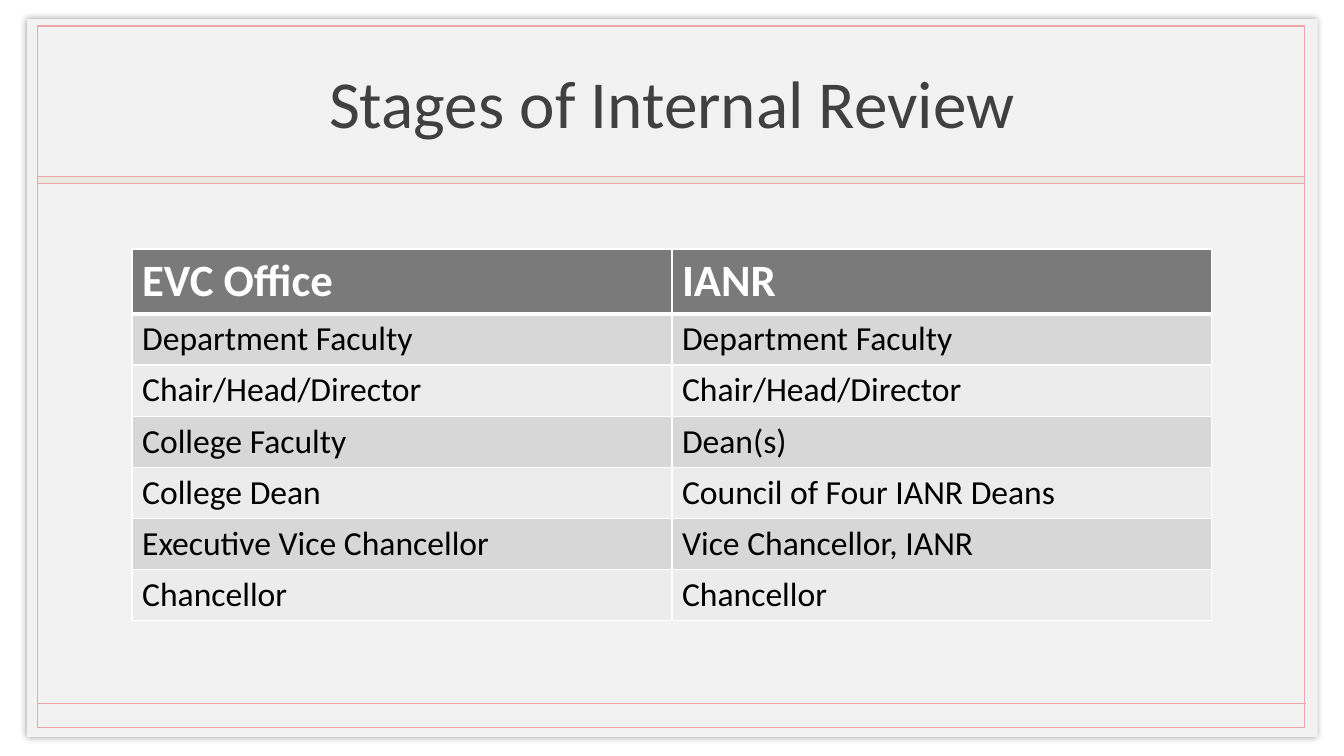
from lxml import etree
from pptx import Presentation
from pptx.dml.color import RGBColor
from pptx.enum.shapes import MSO_CONNECTOR, MSO_SHAPE
from pptx.enum.text import MSO_ANCHOR, PP_ALIGN
from pptx.oxml.ns import qn
from pptx.util import Inches, Pt

RECTANGLE = MSO_SHAPE.RECTANGLE
STRAIGHT = MSO_CONNECTOR.STRAIGHT
MIDDLE = MSO_ANCHOR.MIDDLE
LEFT, CENTER = PP_ALIGN.LEFT, PP_ALIGN.CENTER

WHITE = RGBColor(0xFF, 0xFF, 0xFF)
BLACK = RGBColor(0x00, 0x00, 0x00)
PANEL = RGBColor(0xF2, 0xF2, 0xF2)
ROSE = RGBColor(0xEE, 0xA7, 0xAA)
BAND = RGBColor(0xE9, 0xE9, 0xE0)
TITLE_GREY = RGBColor(0x40, 0x40, 0x40)
HEADER_GREY = RGBColor(0x7A, 0x7A, 0x7A)
ROW_FILLS = (RGBColor(0xD7, 0xD7, 0xD7), RGBColor(0xEC, 0xEC, 0xEC))

STAGES = [
    ("EVC Office", "IANR"),
    ("Department Faculty", "Department Faculty"),
    ("Chair/Head/Director", "Chair/Head/Director"),
    ("College Faculty", "Dean(s)"),
    ("College Dean", "Council of Four IANR Deans"),
    ("Executive Vice Chancellor", "Vice Chancellor, IANR"),
    ("Chancellor", "Chancellor"),
]


def write(frame, text, *, size, color, font="Calibri", bold=False, align=LEFT):
    paragraph = frame.paragraphs[0]
    paragraph.alignment = align
    run = paragraph.add_run()
    run.text = text
    run.font.name = font
    run.font.size = Pt(size)
    run.font.bold = bold
    run.font.color.rgb = color


def add_xml(parent, tag, **attributes):
    return etree.SubElement(parent, qn(tag), attributes)


def add_border(cell, side, width):
    border = add_xml(cell._tc.get_or_add_tcPr(), f"a:ln{side}", w=str(Pt(width)))
    add_xml(add_xml(border, "a:solidFill"), "a:srgbClr", val=str(WHITE))


class ReviewSlide:
    def __init__(self, presentation):
        self.slide = presentation.slides.add_slide(presentation.slide_layouts[5])
        self.shapes = self.slide.shapes

    def box(self, left, top, width, height, fill=None, line=None, weight=1, blur=None):
        box = self.shapes.add_shape(
            RECTANGLE, Inches(left), Inches(top), Inches(width), Inches(height))
        box.shadow.inherit = False
        if fill is None:
            box.fill.background()
        else:
            box.fill.solid()
            box.fill.fore_color.rgb = fill
        if line is None:
            box.line.fill.background()
        else:
            box.line.color.rgb = line
            box.line.width = Pt(weight)
        if blur:
            effects = box.element.spPr.find(qn("a:effectLst"))
            shadow = add_xml(effects, "a:outerShdw", blurRad=str(Pt(blur)),
                             dist="0", dir="0", algn="ctr", rotWithShape="0")
            add_xml(add_xml(shadow, "a:srgbClr", val=str(BLACK)), "a:alpha", val="40000")

    def rule(self, left, right, top):
        rule = self.shapes.add_connector(
            STRAIGHT, Inches(left), Inches(top), Inches(right), Inches(top))
        rule.line.color.rgb = ROSE
        rule.line.width = Pt(1)
        add_xml(rule.element.spPr, "a:effectLst")

    def title(self, text, left, top, width, height):
        title = self.shapes.title
        title.left, title.top = Inches(left), Inches(top)
        title.width, title.height = Inches(width), Inches(height)
        title.text_frame.vertical_anchor = MIDDLE
        write(title.text_frame, text, size=48, color=TITLE_GREY, align=CENTER)
        title.element.getparent().append(title.element)

    def table(self, rows, left, top, width, header_height, row_height):
        height = header_height + row_height * (len(rows) - 1)
        table = self.shapes.add_table(
            len(rows), len(rows[0]), Inches(left), Inches(top),
            Inches(width), Inches(height)).table
        for index, stages in enumerate(rows):
            header = index == 0
            table.rows[index].height = Inches(header_height if header else row_height)
            fill = HEADER_GREY if header else ROW_FILLS[(index - 1) % 2]
            for column, stage in enumerate(stages):
                cell = table.cell(index, column)
                for side in "LRTB":
                    thick = (header and side == "B") or (index == 1 and side == "T")
                    add_border(cell, side, 3 if thick else 1)
                cell.fill.solid()
                cell.fill.fore_color.rgb = fill
                write(cell.text_frame, stage, size=32 if header else 24,
                      color=WHITE if header else BLACK, bold=header)


def main():
    presentation = Presentation()
    presentation.slide_width = Inches(13.33)
    presentation.slide_height = Inches(7.5)
    review = ReviewSlide(presentation)
    review.box(0.27, 0.19, 12.8, 7.12, fill=PANEL, blur=5)
    review.box(0.37, 0.26, 12.57, 6.96, line=ROSE)
    review.rule(0.37, 12.95, 6.98)
    review.box(0.37, 1.75, 12.57, 0.07, fill=BAND, line=ROSE, weight=0.25)
    review.title("Stages of Internal Review", 1.31, 0.27, 10.71, 1.47)
    review.table(STAGES, 1.31, 2.47, 10.71, header_height=0.64, row_height=0.5)
    presentation.save("out.pptx")


if __name__ == "__main__":
    main()
